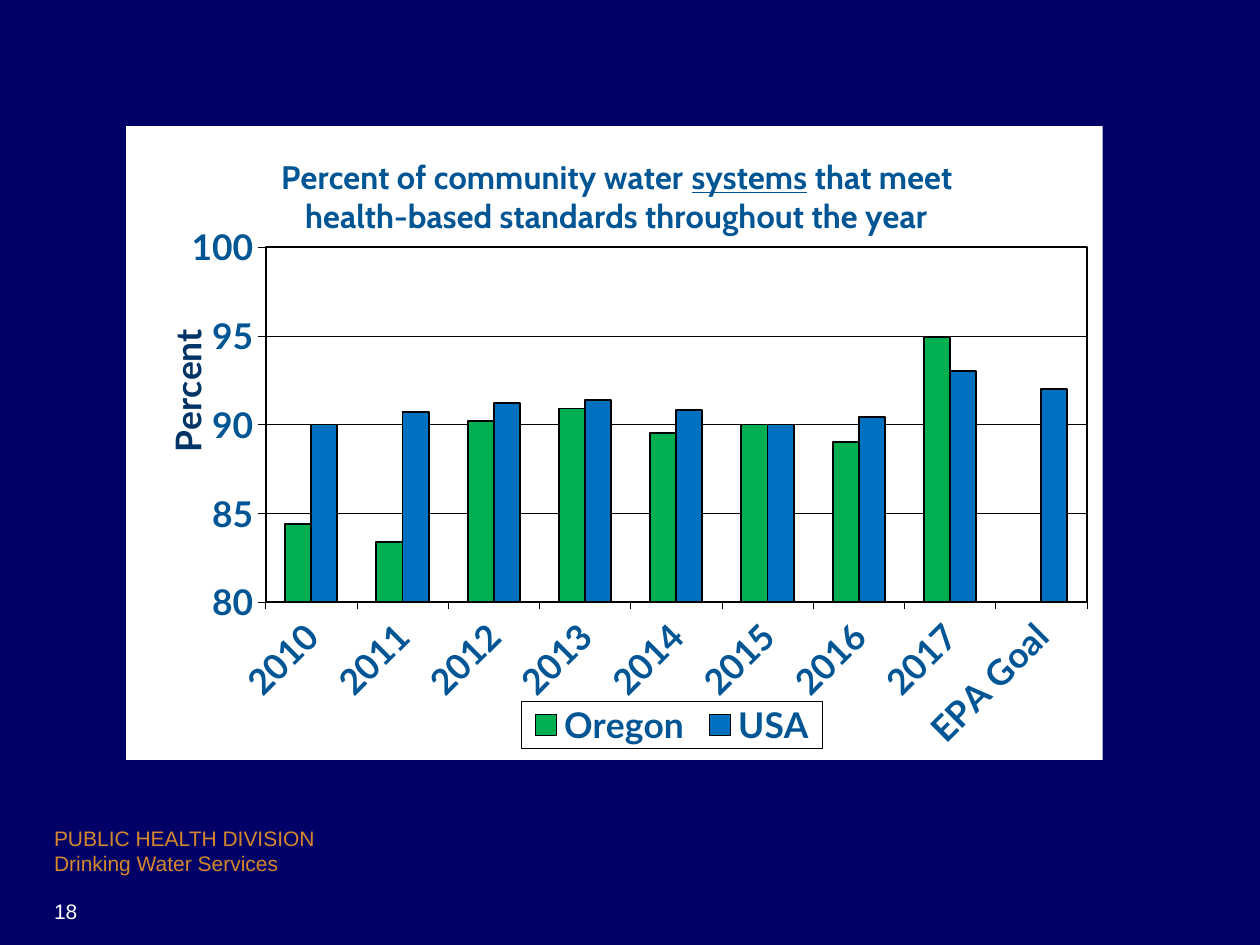
from dataclasses import dataclass

from pptx import Presentation
from pptx.chart.data import CategoryChartData
from pptx.dml.color import RGBColor
from pptx.enum.chart import XL_CHART_TYPE as ChartType
from pptx.enum.chart import XL_LEGEND_POSITION as LegendPosition
from pptx.enum.chart import XL_TICK_MARK as TickMark
from pptx.oxml import parse_xml
from pptx.oxml.ns import nsdecls, qn
from pptx.util import Cm, Pt


@dataclass(frozen=True)
class Theme:
    navy: str = "000066"
    white: str = "FFFFFF"
    black: str = "000000"
    orange: str = "D5872D"
    label_blue: str = "005595"
    axis_blue: str = "003366"
    green: str = "00B050"
    bar_blue: str = "0070C0"
    body_font: str = "Arial"
    title_font: str = "Cabin"
    chart_font: str = "Lato"
    body_size: float = 12
    title_size: float = 18.6
    chart_size: float = 20.2
    hairline: float = 0.28
    outline: float = 1.11


THEME = Theme()
YEARS = [str(year) for year in range(2010, 2018)]
SERIES = {
    "Oregon": (THEME.green, [84.4, 83.4, 90.2, 90.9, 89.5, 90, 89, 94.9, None]),
    "USA": (THEME.bar_blue, [90, 90.7, 91.2, 91.4, 90.8, 90, 90.4, 93, 92]),
}


def style_font(font, name, size, color, bold=False, underline=False):
    font.name, font.size = name, Pt(size)
    font.bold, font.underline = bold, underline
    font.color.rgb = RGBColor.from_string(color)


def write(para, text, **style):
    """Append text in one format, with a line break at each newline."""
    for index, line in enumerate(text.split("\n")):
        if index:
            para.add_line_break()
        span = para.add_run()
        span.text = line
        style_font(span.font, **style)


def set_line(line, width):
    line.color.rgb = RGBColor.from_string(THEME.black)
    line.width = Pt(width)


def area_format(fill=None, width=None):
    """Make shape properties for chart parts that have no format object."""
    paint = '<a:solidFill><a:srgbClr val="{}"/></a:solidFill>'.format
    inside = paint(fill) if fill else "<a:noFill/>"
    edge = paint(THEME.black) if width else "<a:noFill/>"
    return parse_xml(
        f'<c:spPr {nsdecls("c", "a")}>{inside}'
        f'<a:ln w="{Pt(width or 0)}">{edge}</a:ln></c:spPr>'
    )


def place(part, inner=False, **fractions):
    """Position a chart part by fractions of the chart's size."""
    for old in part.findall(qn("c:layout")):
        part.remove(old)
    target = '<c:layoutTarget val="inner"/>' if inner else ""
    modes = "".join(f'<c:{key}Mode val="edge"/>' for key in "xy")
    values = "".join(f'<c:{key} val="{value}"/>' for key, value in fractions.items())
    layout = parse_xml(
        f'<c:layout {nsdecls("c")}><c:manualLayout>{target}{modes}{values}'
        "</c:manualLayout></c:layout>"
    )
    if inner:
        part.insert(0, layout)
    else:
        part.find(qn("c:overlay")).addprevious(layout)


def add_label(page, box, text, color):
    frame = page.shapes.add_textbox(*box).text_frame
    frame.word_wrap = True
    write(frame.paragraphs[0], text, name=THEME.body_font,
          size=THEME.body_size, color=color)


def title_chart(chart):
    frame = chart.chart_title.text_frame
    style = dict(name=THEME.title_font, size=THEME.title_size,
                 color=THEME.label_blue, bold=True)
    first = frame.paragraphs[0]
    write(first, "Percent of community water ", **style)
    write(first, "systems", underline=True, **style)
    write(first, " that meet", **style)
    write(frame.add_paragraph(), "health-based standards throughout the year", **style)


def format_axes(chart):
    categories, values = chart.category_axis, chart.value_axis
    for axis in (categories, values):
        axis.major_tick_mark = TickMark.OUTSIDE
        axis.minor_tick_mark = TickMark.NONE
        set_line(axis.format.line, THEME.hairline)
        style_font(axis.tick_labels.font, THEME.chart_font, THEME.chart_size,
                   THEME.label_blue, bold=True)
    labels = categories._element.find(qn("c:txPr"))
    labels.find(qn("a:bodyPr")).set("rot", str(-45 * 60000))
    values.minimum_scale, values.maximum_scale, values.major_unit = 80, 100, 5
    set_line(values.major_gridlines.format.line, THEME.hairline)
    frame = values.axis_title.text_frame
    write(frame.paragraphs[0], "Percent", name=THEME.chart_font,
          size=THEME.chart_size, color=THEME.axis_blue, bold=True)
    body = frame._txBody.find(qn("a:bodyPr"))
    body.set("rot", str(-90 * 60000))
    body.set("vert", "horz")
    place(values.axis_title._element, x=0.03, y=0.31)


def add_standards_chart(page, box):
    data = CategoryChartData()
    data.categories = YEARS + ["EPA Goal"]
    for name, (_, values) in SERIES.items():
        data.add_series(name, values)
    chart = page.shapes.add_chart(ChartType.COLUMN_CLUSTERED, *box, data).chart
    style_font(chart.font, THEME.chart_font, THEME.chart_size,
               THEME.label_blue, bold=True)
    root = chart._chartSpace
    root.find(qn("c:txPr")).addprevious(area_format(fill=THEME.white))

    title_chart(chart)
    place(chart.chart_title._element, x=0.155, y=0.04)
    format_axes(chart)

    plot = chart.plots[0]
    plot.gap_width, plot.overlap, plot.vary_by_categories = 150, 0, False
    for series, (color, _) in zip(plot.series, SERIES.values()):
        series.format.fill.solid()
        series.format.fill.fore_color.rgb = RGBColor.from_string(color)
        set_line(series.format.line, THEME.outline)
    area = root.chart.plotArea
    area.append(area_format(width=THEME.outline))
    place(area, inner=True, x=0.143, y=0.191, w=0.841, h=0.56)

    chart.has_legend = True
    legend = chart.legend
    legend.position = LegendPosition.BOTTOM
    legend.include_in_layout = False
    style_font(legend.font, THEME.chart_font, THEME.chart_size,
               THEME.label_blue, bold=True)
    legend_part = legend._element
    place(legend_part, x=0.405, y=0.907, w=0.308, h=0.075)
    legend_part.find(qn("c:txPr")).addprevious(area_format(width=THEME.hairline))


def add_footer(page, left, top):
    add_label(page, (left, top, Cm(9.73), Cm(1.32)),
              "PUBLIC HEALTH DIVISION\nDrinking Water Services", THEME.orange)
    add_label(page, (left, top + Cm(1.47), Cm(5.28), Cm(0.84)), "18", THEME.white)


def main():
    deck = Presentation()
    deck.slide_width, deck.slide_height = Cm(25.4), Cm(19.05)
    page = deck.slides.add_slide(deck.slide_layouts[6])
    page.background.fill.solid()
    page.background.fill.fore_color.rgb = RGBColor.from_string(THEME.navy)
    add_footer(page, Cm(0.84), Cm(16.51))
    add_standards_chart(page, (Cm(2.54), Cm(2.54), Cm(19.69), Cm(12.78)))
    deck.save("out.pptx")


if __name__ == "__main__":
    main()
